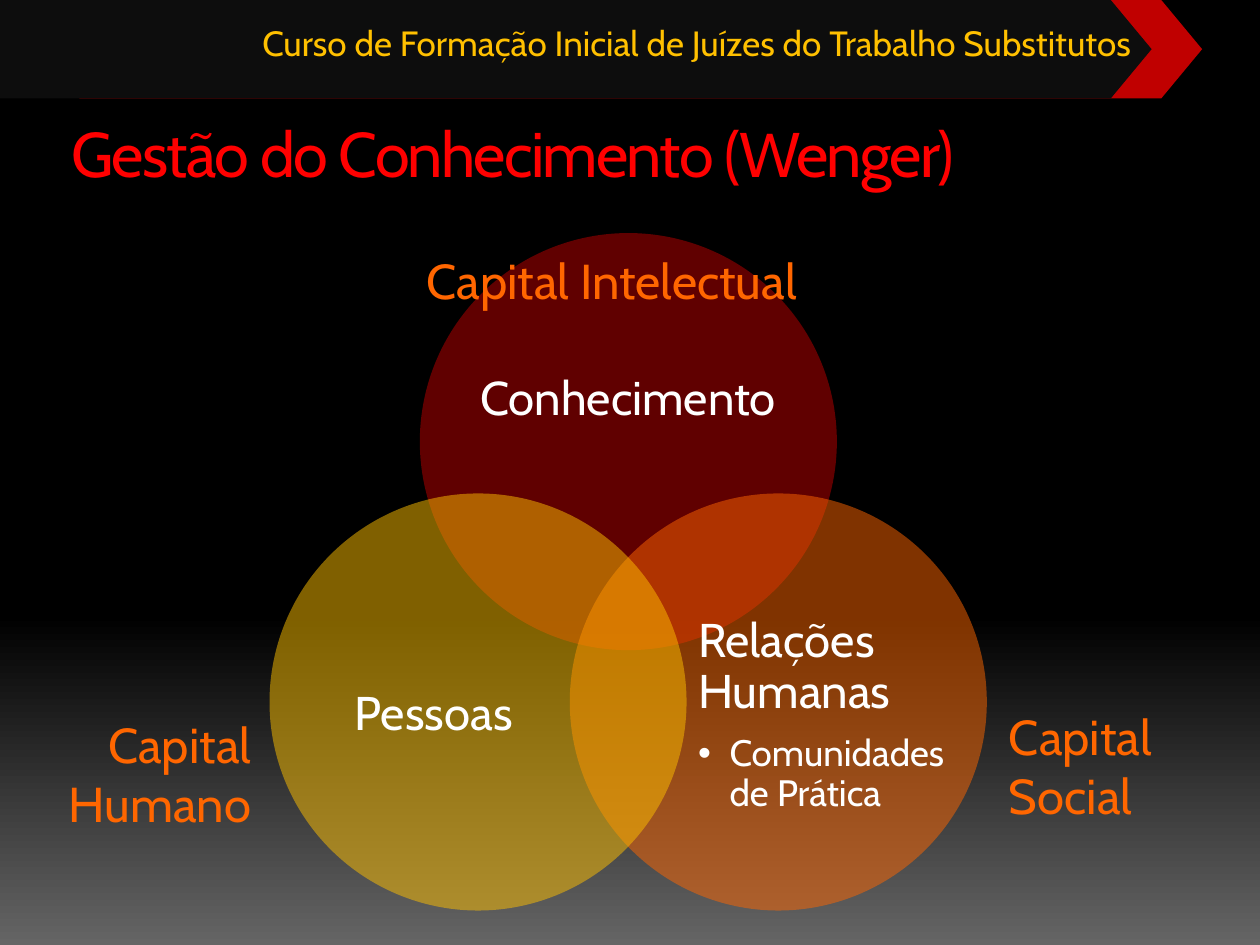
from dataclasses import dataclass

import pptx
import pptx.dml.color
import pptx.enum.shapes
import pptx.enum.text
import pptx.oxml.ns
import pptx.util
from lxml import etree

Pt = pptx.util.Pt
Shape = pptx.enum.shapes.MSO_SHAPE
Align = pptx.enum.text.PP_ALIGN
Anchor = pptx.enum.text.MSO_ANCHOR
AutoSize = pptx.enum.text.MSO_AUTO_SIZE
qn = pptx.oxml.ns.qn

FONT = "Cabin"
BLACK, WHITE, RED, GOLD, ORANGE = "000000", "FFFFFF", "C00000", "FFC000", "FF6600"
DIAMETER = 238.3
INSETS = (7.2, 3.6, 7.2, 3.6)
NO_INSETS = (0, 0, 0, 0)


@dataclass(frozen=True)
class Frame:
    left: float
    top: float
    width: float
    height: float


@dataclass(frozen=True)
class Line:
    text: str
    size: float
    color: str
    align: Align = Align.LEFT
    spacing: float = 1.0
    after: float = 0
    bullet: bool = False


@dataclass(frozen=True)
class Circle:
    left: float
    top: float
    color: str


@dataclass(frozen=True)
class Label:
    frame: Frame
    line: Line
    insets: tuple = INSETS
    anchor: Anchor = Anchor.TOP
    autosize: AutoSize = AutoSize.SHAPE_TO_FIT_TEXT


def rgb(color: str) -> pptx.dml.color.RGBColor:
    return pptx.dml.color.RGBColor.from_string(color)


def place(shape, frame: Frame) -> None:
    shape.left, shape.top = Pt(frame.left), Pt(frame.top)
    shape.width, shape.height = Pt(frame.width), Pt(frame.height)


def set_bullet(para, bullet: bool) -> None:
    properties = para._p.get_or_add_pPr()
    indent = Pt(18) if bullet else 0
    properties.set("marL", str(indent))
    properties.set("indent", str(-indent))
    if bullet:
        etree.SubElement(properties, qn("a:buChar"), char="•")
    else:
        etree.SubElement(properties, qn("a:buNone"))


def write(box, lines: list[Line], insets=INSETS, anchor=Anchor.TOP, autosize=AutoSize.NONE) -> None:
    text = box.text_frame
    text.word_wrap = True
    text.auto_size = autosize
    text.vertical_anchor = anchor
    text.margin_left, text.margin_top, text.margin_right, text.margin_bottom = map(Pt, insets)
    for index, line in enumerate(lines):
        para = text.add_paragraph() if index else text.paragraphs[0]
        para.level = int(line.bullet)
        set_bullet(para, line.bullet)
        para.alignment = line.align
        para.line_spacing = line.spacing
        para.space_before = Pt(0)
        para.space_after = Pt(line.after)
        span = para.add_run()
        span.text = line.text
        span.font.name = FONT
        span.font.size = Pt(line.size)
        span.font.color.rgb = rgb(line.color)


def add_label(slide, label: Label) -> None:
    box = slide.shapes.add_textbox(0, 0, 0, 0)
    write(box, [label.line], label.insets, label.anchor, label.autosize)
    place(box, label.frame)


def add_filled(slide, kind: Shape, frame: Frame, color: str):
    shape = slide.shapes.add_shape(kind, 0, 0, 0, 0)
    place(shape, frame)
    shape.shadow.inherit = False
    shape.fill.solid()
    shape.fill.fore_color.rgb = rgb(color)
    shape.line.fill.background()
    return shape


def add_arrow(slide, frame: Frame, color: str) -> None:
    arrow = add_filled(slide, Shape.PENTAGON, frame, color)
    arrow.adjustments[0] = 0.415


def add_circle(slide, circle: Circle) -> None:
    frame = Frame(circle.left, circle.top, DIAMETER, DIAMETER)
    shape = add_filled(slide, Shape.OVAL, frame, circle.color)
    color = shape.element.spPr.find(".//" + qn("a:srgbClr"))
    etree.SubElement(color, qn("a:alpha"), val="50000")


def set_background(slide) -> None:
    fill = slide.background.fill
    fill.gradient()
    fill.gradient_angle = 270
    for stop, position, color in zip(fill.gradient_stops, (0.65, 1), (BLACK, "656565")):
        stop.position = position
        stop.color.rgb = rgb(color)


def inner_label(text: str, frame: Frame) -> Label:
    line = Line(text, 27, WHITE, Align.CENTER, 0.9)
    return Label(frame, line, NO_INSETS, Anchor.MIDDLE, AutoSize.NONE)


def main() -> None:
    deck = pptx.Presentation()
    deck.slide_width, deck.slide_height = Pt(720), Pt(540)
    slide = deck.slides.add_slide(deck.slide_layouts[1])
    set_background(slide)

    add_arrow(slide, Frame(45.4, 0, 641.5, 56.2), RED)
    add_arrow(slide, Frame(0, 0, 658.1, 56.2), "0D0D0D")
    course = Line("Curso de Formação Inicial de Juízes do Trabalho Substitutos", 20, GOLD, Align.RIGHT)
    add_label(slide, Label(Frame(118.1, 8.6, 528.5, 31.7), course, (7.2, 3.6, 0, 3.6)))

    title = slide.shapes.title
    place(title, Frame(33.8, 61.9, 650.2, 72))
    write(title, [Line("Gestão do Conhecimento (Wenger)", 36, "FF0000")])
    title.text_frame.paragraphs[0].runs[0].font._element.set("spc", "-100")

    circles = [
        Circle(239.9, 133.2, RED),
        Circle(325.6, 282, ORANGE),
        Circle(154, 282, GOLD),
    ]
    for circle in circles:
        add_circle(slide, circle)

    relations = slide.placeholders[1]
    relations.element.getparent().append(relations.element)
    place(relations, Frame(398.9, 343.4, 142.6, 131))
    relation_lines = [
        Line("Relações Humanas", 27, WHITE, spacing=0.9, after=9.45),
        Line("Comunidades de Prática", 21, WHITE, spacing=0.9, after=3.15, bullet=True),
    ]
    write(relations, relation_lines, NO_INSETS, Anchor.MIDDLE)

    labels = [
        inner_label("Conhecimento", Frame(271.4, 175, 175, 107.3)),
        inner_label("Pessoas", Frame(176.4, 343.4, 142.6, 131)),
        Label(Frame(235.4, 139.7, 226.8, 41), Line("Capital Intelectual", 28, ORANGE, Align.RIGHT)),
        Label(Frame(569.5, 400.3, 108, 74.9), Line("Capital Social", 28, ORANGE)),
        Label(Frame(2.9, 404.6, 147.6, 74.9), Line("Capital Humano", 28, ORANGE, Align.RIGHT)),
    ]
    for label in labels:
        add_label(slide, label)

    deck.save("out.pptx")


if __name__ == "__main__":
    main()
